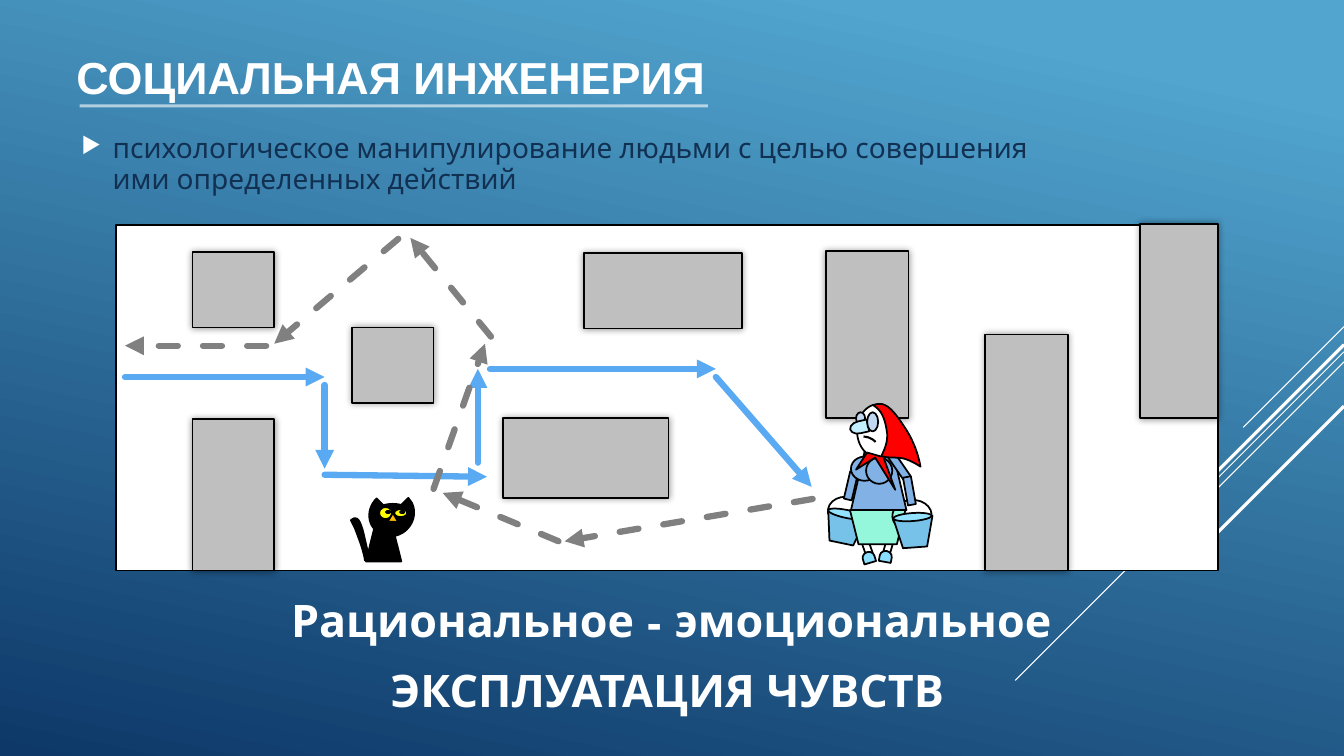
from dataclasses import dataclass

from lxml.etree import SubElement
from pptx import Presentation
from pptx.dml.color import RGBColor
from pptx.enum.dml import MSO_LINE
from pptx.enum.shapes import MSO_CONNECTOR, MSO_SHAPE as S
from pptx.enum.text import MSO_ANCHOR, PP_ALIGN
from pptx.oxml.ns import qn
from pptx.util import Pt

UNIT = 9144


@dataclass(frozen=True)
class Theme:
    sky: str = "51A5CF"
    navy: str = "0D3868"
    ink: str = "113052"
    white: str = "FFFFFF"
    black: str = "000000"
    wall: str = "BFBFBF"
    route: str = "59AAF2"
    trail: str = "808080"
    pail: str = "77C2E8"
    water: str = "93E3FF"
    skirt: str = "94F7DC"
    dress: str = "82B1E5"
    shoe: str = "8ADFFF"
    scarf: str = "FF0000"
    lens: str = "C1D8F2"
    nose: str = "C4EFFF"
    eye: str = "FFFF00"
    beak: str = "FFC000"
    head: str = "Arial"
    body: str = "League Spartan"
    big: int = 32
    small: int = 20
    thin: float = 0.75
    edge: float = 1.25
    mid: float = 2.25
    thick: float = 4.5


def px(n):
    return round(n * UNIT)


def trace(start, steps, count=10):
    points = [start]
    for step in steps:
        if len(step) == 2:
            points.append(step)
            continue
        a, b, c, d = points[-1], step[:2], step[2:4], step[4:]
        for i in range(1, count + 1):
            t = i / count
            u = 1 - t
            points.append(tuple(
                u**3 * a[k] + 3 * u * u * t * b[k] + 3 * u * t * t * c[k] + t**3 * d[k]
                for k in (0, 1)))
    return [(px(x), px(y)) for x, y in points]


class Board:
    def __init__(self, slide, theme):
        self.slide = slide
        self.shapes = slide.shapes
        self.theme = theme

    def ground(self):
        fill = self.slide.background.fill
        fill.gradient()
        fill.gradient_angle = 258
        stops = ((0.1, self.theme.sky), (1, self.theme.navy))
        for stop, (place, tone) in zip(fill.gradient_stops, stops):
            stop.position = place
            stop.color.rgb = RGBColor.from_string(tone)

    def style(self, item, fill, edge):
        item.shadow.inherit = False
        if fill:
            item.fill.solid()
            item.fill.fore_color.rgb = RGBColor.from_string(fill)
        else:
            item.fill.background()
        if edge:
            item.line.color.rgb = RGBColor.from_string(self.theme.black)
            item.line.width = Pt(edge)
        else:
            item.line.fill.background()
        return item

    def shape(self, kind, box, fill=None, turn=0, edge=Theme.edge, adjust=()):
        item = self.shapes.add_shape(kind, *map(px, box))
        item.rotation = turn
        for i, value in enumerate(adjust):
            item.adjustments[i] = value
        return self.style(item, fill, edge)

    def house(self, box):
        item = self.shape(S.RECTANGLE, box, self.theme.wall)
        effect = item.element.spPr.find(qn("a:effectLst"))
        glow = SubElement(effect, qn("a:outerShdw"), blurRad=str(Pt(5)), dist="0", dir="0")
        tone = SubElement(glow, qn("a:srgbClr"), val=self.theme.black)
        SubElement(tone, qn("a:alpha"), val="40000")

    def form(self, start, steps, fill):
        first, *rest = trace(start, steps)
        maker = self.shapes.build_freeform(*first)
        maker.add_line_segments(rest, close=True)
        self.style(maker.convert_to_shape(), fill, self.theme.edge)

    def line(self, ends, tone, width, alpha=None, arrow=False, dash=False):
        item = self.shapes.add_connector(MSO_CONNECTOR.STRAIGHT, *map(px, ends))
        item.line.color.rgb = RGBColor.from_string(tone)
        item.line.width = Pt(width)
        if dash:
            item.line.dash_style = MSO_LINE.DASH
        props = item.element.spPr
        stroke = props.find(qn("a:ln"))
        if alpha:
            SubElement(stroke.find(".//" + qn("a:srgbClr")), qn("a:alpha"), val=str(alpha * 1000))
        if arrow:
            stroke.set("cap", "rnd")
            SubElement(stroke, qn("a:round"))
            SubElement(stroke, qn("a:tailEnd"), type="triangle")
        SubElement(props, qn("a:effectLst"))

    def text(self, box, words, font, size, tone, bold=False, align=PP_ALIGN.LEFT,
             anchor=MSO_ANCHOR.MIDDLE):
        frame = self.shapes.add_textbox(*map(px, box)).text_frame
        frame.word_wrap = True
        frame.vertical_anchor = anchor
        para = frame.paragraphs[0]
        para.alignment = align
        run = para.add_run()
        run.text = words
        run.font.name = font
        run.font.size = Pt(size)
        run.font.bold = bold
        run.font.color.rgb = RGBColor.from_string(tone)
        return para

    def bullet(self, para):
        para.line_spacing = 0.9
        para.space_before = Pt(4)
        para.space_after = Pt(6)
        props = para._p.get_or_add_pPr()
        props.set("marL", str(px(31)))
        props.set("indent", str(px(-31)))
        tone = SubElement(props, qn("a:buClr"))
        SubElement(tone, qn("a:srgbClr"), val=self.theme.white)
        SubElement(props, qn("a:buSzPct"), val="80000")
        SubElement(props, qn("a:buChar"), char="▶")


def draw_map(board, t):
    board.shape(S.RECTANGLE, (115, 223, 1093, 343), t.white)
    for box in ((191, 250, 81, 75), (349, 325, 81, 75), (191, 416, 81, 150),
                (579, 251, 157, 75), (499, 415, 164, 79), (819, 249, 82, 166),
                (977, 332, 82, 234), (1131, 222, 77, 193)):
        board.house(box)
    for ends in ((124, 374, 322, 374), (322, 382, 322, 465), (322, 471, 483, 473),
                 (474, 459, 474, 366), (486, 366, 710, 366), (710, 374, 805, 483)):
        board.line(ends, t.route, t.thick, arrow=True)


def draw_woman(board, t):
    for kind, box, fill, turn in (
            (S.OVAL, (821, 493, 39, 31), None, 11.7),
            (S.TRAPEZOID, (818, 509, 39, 30), t.pail, 191.7),
            (S.OVAL, (821, 506, 38, 8), t.water, 11.7),
            (S.RECTANGLE, (877, 537, 7, 15), t.white, 15.8),
            (S.RECTANGLE, (857, 537, 7, 15), t.white, 340.4),
            (S.TRAPEZOID, (843, 506, 55, 34), t.skirt, 180),
            (S.OVAL, (885, 496, 39, 31), None, 355.9),
            (S.TRAPEZOID, (887, 513, 39, 30), t.pail, 175.9),
            (S.OVAL, (886, 509, 38, 8), t.water, 355.9),
            (S.TRAPEZOID, (844, 447, 55, 59), t.dress, 0),
            (S.RECTANGLE, (840, 468, 8, 28), t.dress, 13.2),
            (S.OVAL, (844, 453, 27, 24), t.dress, 0),
            (S.OVAL, (859, 454, 26, 26), t.dress, 0),
            (S.RECTANGLE, (888, 449, 8, 28), t.dress, 325.4),
            (S.RECTANGLE, (898, 473, 8, 28), t.dress, 349.8),
            (S.FLOWCHART_DELAY, (856, 547, 11, 12), t.shoe, 253.1),
            (S.FLOWCHART_DELAY, (873, 546, 11, 12), t.shoe, 280.3),
            (S.OVAL, (850, 401, 42, 53), t.white, 0)):
        board.shape(kind, box, fill, turn)
    board.form((860, 449), (
        (849, 466), (868, 454), (888, 486), (876, 453), (889, 456, 893, 450, 913, 463),
        (910, 446, 903, 432, 896, 422), (880, 397, 873, 400, 866, 402),
        (874, 407, 878, 414, 880, 431), (880, 441, 877, 446, 874, 453)), t.scarf)
    board.shape(S.OVAL, (849, 409, 9, 12), t.lens)
    board.shape(S.FLOWCHART_DELAY, (843, 418, 18, 12), t.nose, 167.1)
    board.shape(S.ARC, (837, 433, 37, 38), None, 3.1, 1.5, (162, 186.36))
    board.shape(S.OVAL, (860, 409, 11, 19), t.lens)


def draw_cat(board, t):
    board.shape(S.PIE, (367, 487, 43, 46), t.black, 46, adjust=(162, 108))
    board.shape(S.OVAL, (370, 499, 39, 20), t.black, edge=0)
    board.shape(S.OVAL, (391, 505, 13, 8), t.eye)
    board.shape(S.OVAL, (376, 503, 13, 12), t.eye)
    board.shape(S.ISOSCELES_TRIANGLE, (386, 511, 10, 9), t.beak, 121)
    for left in (396, 382):
        board.shape(S.OVAL, (left, 506, 6, 4), t.black, edge=0)
    board.shape(S.TRAPEZOID, (363, 524, 35, 33), t.black)
    board.form((362, 556), ((360, 544, 356, 535, 352, 524), (348, 516),
                            (360, 505, 361, 541, 367, 553)), t.black)


def main():
    deck = Presentation()
    deck.slide_width, deck.slide_height = px(1333), px(750)
    t = Theme()
    board = Board(deck.slides.add_slide(deck.slide_layouts[6]), t)
    board.ground()
    for top, reach, width in ((324, 100, t.thin), (349, 326, t.thin), (359, 207, t.thin),
                              (342, 191, t.mid), (403, 139, t.mid)):
        board.line((1333, top, 1333 - reach, top + reach), t.white, width)
    board.bullet(board.text(
        (71, 123, 978, 81),
        "психологическое манипулирование людьми с целью совершения ими определенных действий",
        t.body, t.small, t.ink))
    draw_map(board, t)
    draw_woman(board, t)
    for ends in ((806, 495, 560, 537), (554, 537, 439, 489), (430, 485, 481, 341),
                 (487, 334, 407, 236), (395, 237, 272, 341), (264, 343, 124, 343)):
        board.line(ends, t.trail, t.thick, arrow=True, dash=True)
    draw_cat(board, t)
    board.text((66, 46, 1198, 59), "СОЦИАЛЬНАЯ ИНЖЕНЕРИЯ", t.head, t.big, t.white, True)
    board.line((79, 105, 702, 105), t.white, t.mid, alpha=60)
    for left, top, words in ((36, 583, "Рациональное - эмоциональное"),
                             (32, 653, "ЭКСПЛУАТАЦИЯ ЧУВСТВ")):
        board.text((left, top, 1260, 64), words, t.body, t.big, t.white, True,
                   PP_ALIGN.CENTER, MSO_ANCHOR.TOP)
    deck.save("out.pptx")


if __name__ == "__main__":
    main()
